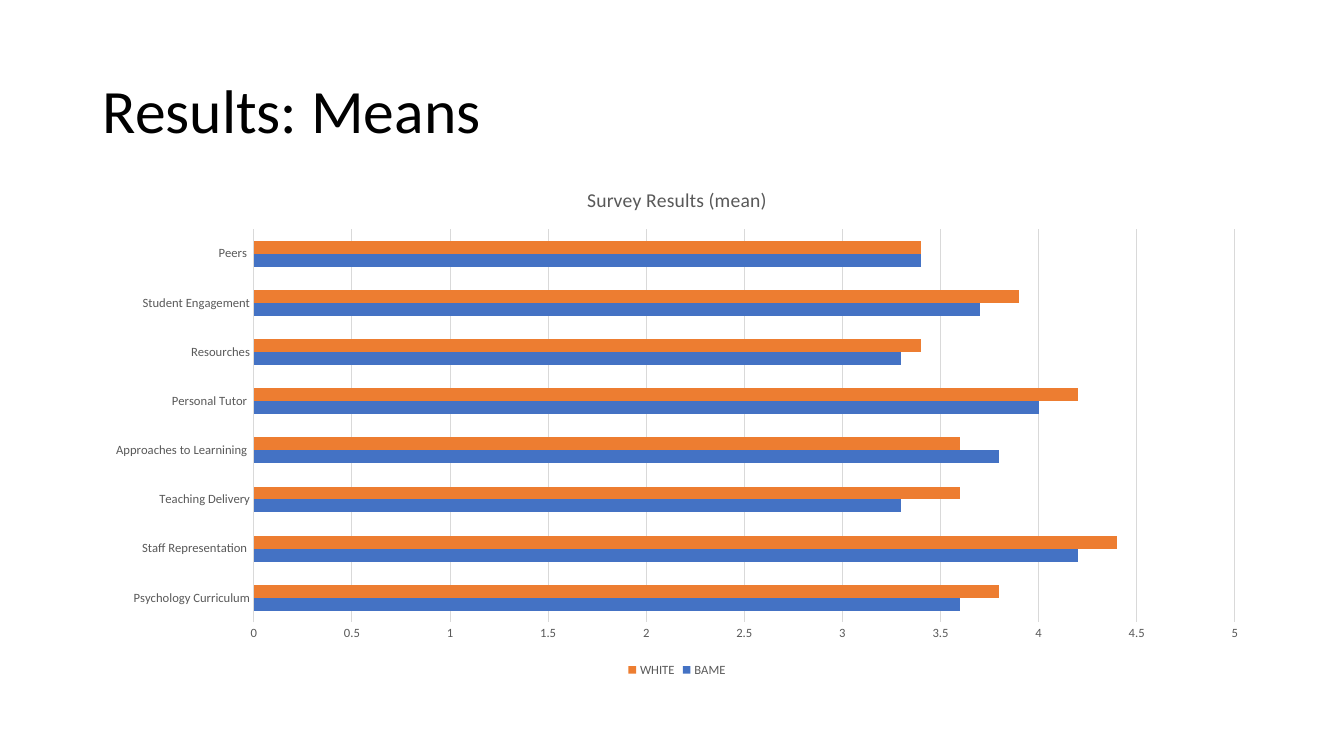
from dataclasses import dataclass
from typing import Any

import pptx
import pptx.chart.data
import pptx.dml.color
import pptx.enum.chart
import pptx.enum.text
import pptx.util

EMU_PER_PX = 9144  # 100 px to the inch
FONT_NAME = "Calibri"
BLACK = pptx.dml.color.RGBColor(0x00, 0x00, 0x00)
GREY = pptx.dml.color.RGBColor(0x59, 0x59, 0x59)
LIGHT_GREY = pptx.dml.color.RGBColor(0xD9, 0xD9, 0xD9)
BLUE = pptx.dml.color.RGBColor(0x44, 0x72, 0xC4)
ORANGE = pptx.dml.color.RGBColor(0xED, 0x7D, 0x31)


@dataclass(frozen=True)
class SurveyGroup:
    name: str
    means: tuple[float, ...]
    color: pptx.dml.color.RGBColor


CATEGORIES = (
    "Psychology Curriculum",
    "Staff Representation ",
    "Teaching Delivery",
    "Approaches to Learnining ",
    "Personal Tutor ",
    "Resourches",
    "Student Engagement",
    "Peers ",
)
GROUPS = (
    SurveyGroup("BAME", (3.6, 4.2, 3.3, 3.8, 4, 3.3, 3.7, 3.4), BLUE),
    SurveyGroup("WHITE", (3.8, 4.4, 3.6, 3.6, 4.2, 3.4, 3.9, 3.4), ORANGE),
)


def px(length: int) -> pptx.util.Emu:
    return pptx.util.Emu(length * EMU_PER_PX)


def apply_format(target: Any, values: dict[str, Any]) -> None:
    for name, value in values.items():
        setattr(target, name, value)


def format_font(font: Any, size: int, color: pptx.dml.color.RGBColor) -> None:
    apply_format(font, {"name": FONT_NAME, "size": pptx.util.Pt(size), "bold": False})
    font.color.rgb = color


def format_thin_line(line: Any) -> None:
    line.color.rgb = LIGHT_GREY
    line.width = pptx.util.Pt(0.75)


def add_title(slide: Any) -> None:
    shape = slide.shapes.add_textbox(px(92), px(40), px(1150), px(145))
    apply_format(shape.text_frame, {
        "word_wrap": True,
        "vertical_anchor": pptx.enum.text.MSO_ANCHOR.MIDDLE,
    })
    paragraph = shape.text_frame.paragraphs[0]
    apply_format(paragraph, {"text": "Results: Means", "line_spacing": 0.9})
    format_font(paragraph.runs[0].font, 44, BLACK)


def format_axes(chart: Any) -> None:
    for axis in (chart.category_axis, chart.value_axis):
        apply_format(axis, {
            "major_tick_mark": pptx.enum.chart.XL_TICK_MARK.NONE,
            "minor_tick_mark": pptx.enum.chart.XL_TICK_MARK.NONE,
        })
        format_font(axis.tick_labels.font, 9, GREY)
    format_thin_line(chart.category_axis.format.line)
    apply_format(chart.value_axis, {
        "minimum_scale": 0,
        "maximum_scale": 5,
        "major_unit": 0.5,
        "has_major_gridlines": True,
    })
    chart.value_axis.format.line.fill.background()
    format_thin_line(chart.value_axis.major_gridlines.format.line)


def add_survey_chart(slide: Any) -> None:
    chart_data = pptx.chart.data.CategoryChartData()
    chart_data.categories = CATEGORIES
    for group in GROUPS:
        chart_data.add_series(group.name, group.means)
    chart = slide.shapes.add_chart(
        pptx.enum.chart.XL_CHART_TYPE.BAR_CLUSTERED,
        px(92), px(166), px(1159), px(510), chart_data,
    ).chart
    format_font(chart.font, 10, BLACK)

    apply_format(chart, {"has_title": True, "has_legend": True})
    paragraph = chart.chart_title.text_frame.paragraphs[0]
    paragraph.text = "Survey Results (mean)"
    format_font(paragraph.runs[0].font, 14, GREY)
    apply_format(chart.legend, {
        "position": pptx.enum.chart.XL_LEGEND_POSITION.BOTTOM,
        "include_in_layout": False,
    })
    format_font(chart.legend.font, 9, GREY)

    format_axes(chart)
    plot = chart.plots[0]
    apply_format(plot, {"gap_width": 182, "vary_by_categories": False})
    for series, group in zip(plot.series, GROUPS):
        series.format.fill.solid()
        series.format.fill.fore_color.rgb = group.color


def main() -> None:
    presentation = pptx.Presentation()
    apply_format(presentation, {"slide_width": px(1333), "slide_height": px(750)})
    slide = presentation.slides.add_slide(presentation.slide_layouts[6])
    add_title(slide)
    add_survey_chart(slide)
    presentation.save("out.pptx")


if __name__ == "__main__":
    main()
